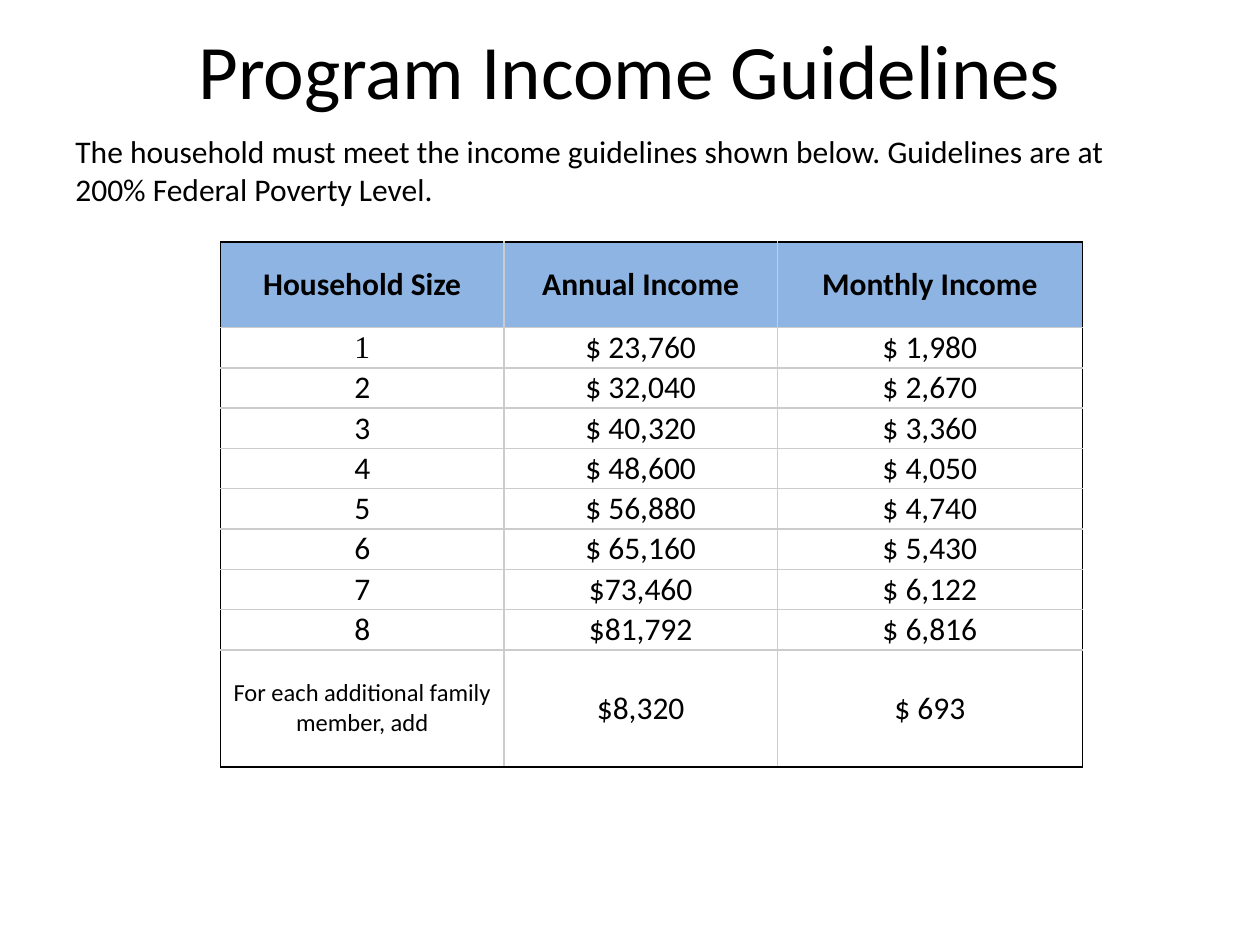
from dataclasses import dataclass

from lxml import etree
from pptx import Presentation
from pptx import util as u
from pptx.dml.color import RGBColor
from pptx.enum import text as t
from pptx.oxml import ns


@dataclass(frozen=True)
class Theme:
    font: str = "Calibri"
    serif: str = "Times New Roman"
    ink: str = "000000"
    grid: str = "CCCCCC"
    head: str = "8EB4E3"
    paper: str = "FFFFFF"
    title: int = 44
    body: int = 18
    small: int = 14
    line: int = 1


THEME = Theme()

HEADS = ("Household Size", "Annual Income", "Monthly Income")
ROWS = (
    ("1", "$ 23,760", "$ 1,980"),
    ("2", "$ 32,040", "$ 2,670"),
    ("3", "$ 40,320", "$ 3,360"),
    ("4", "$ 48,600", "$ 4,050"),
    ("5", "$ 56,880", "$ 4,740"),
    ("6", "$ 65,160", "$ 5,430"),
    ("7", "$73,460", "$ 6,122"),
    ("8", "$81,792", "$ 6,816"),
    ("For each additional family member, add", "$8,320", "$ 693"),
)
WIDTHS = (2.25, 2.17, 2.42)
HEIGHTS = (0.68, *[0.32] * 8, 0.93)


def write(frame, words, size=THEME.body, font=THEME.font, bold=False,
          align=t.PP_ALIGN.CENTER):
    """Put one formatted paragraph into a text frame."""
    frame.word_wrap = True
    para = frame.paragraphs[0]
    para.alignment = align
    run = para.add_run()
    run.text = words
    run.font.size = u.Pt(size)
    run.font.name = font
    run.font.bold = bold
    run.font.color.rgb = RGBColor.from_string(THEME.ink)


def add_box(slide, words, left, top, width, height,
            anchor=t.MSO_ANCHOR.TOP, **style):
    box = slide.shapes.add_textbox(*map(u.Inches, (left, top, width, height)))
    box.text_frame.vertical_anchor = anchor
    write(box.text_frame, words, **style)


def add_edge(cell, side, color):
    """Draw one cell border; side is L, R, T or B."""
    props = cell._tc.get_or_add_tcPr()
    line = etree.SubElement(props, ns.qn(f"a:ln{side}"),
                            w=str(u.Pt(THEME.line)))
    fill = etree.SubElement(line, ns.qn("a:solidFill"))
    etree.SubElement(fill, ns.qn("a:srgbClr"), val=color)


def style_cell(cell, outer, fill):
    cell.margin_left = cell.margin_right = u.Inches(0.07)
    cell.margin_top = cell.margin_bottom = 0
    cell.vertical_anchor = t.MSO_ANCHOR.MIDDLE
    # Borders must come before the fill in the cell properties
    for side, edge in outer.items():
        add_edge(cell, side, THEME.ink if edge else THEME.grid)
    cell.fill.solid()
    cell.fill.fore_color.rgb = RGBColor.from_string(fill)


def add_grid(slide, left, top):
    data = (HEADS, *ROWS)
    table = slide.shapes.add_table(
        len(data), len(HEADS), u.Inches(left), u.Inches(top),
        u.Inches(sum(WIDTHS)), u.Inches(sum(HEIGHTS))).table
    table.horz_banding = False
    for col, width in zip(table.columns, WIDTHS):
        col.width = u.Inches(width)
    for row, height in zip(table.rows, HEIGHTS):
        row.height = u.Inches(height)

    end, last = len(data) - 1, len(HEADS) - 1
    for r, line in enumerate(data):
        for c, words in enumerate(line):
            cell = table.cell(r, c)
            outer = {"L": c == 0, "R": c == last, "T": r == 0, "B": r == end}
            style_cell(cell, outer, THEME.paper if r else THEME.head)
            write(cell.text_frame, words, bold=r == 0,
                  size=THEME.small if (r, c) == (end, 0) else THEME.body,
                  font=THEME.serif if (r, c) == (1, 0) else THEME.font)


def main():
    deck = Presentation()
    deck.slide_width, deck.slide_height = u.Inches(10), u.Inches(7.5)
    slide = deck.slides.add_slide(deck.slide_layouts[6])

    # Income table
    add_grid(slide, 1.75, 1.92)

    # Title and introduction
    add_box(slide, "Program Income Guidelines", 0.5, -0.08, 9, 1.25,
            anchor=t.MSO_ANCHOR.MIDDLE, size=THEME.title)
    add_box(slide, "The household must meet the income guidelines shown "
            "below. Guidelines are at 200% Federal Poverty Level.",
            0.5, 1, 8.92, 0.71, align=t.PP_ALIGN.LEFT)

    deck.save("out.pptx")


if __name__ == "__main__":
    main()
